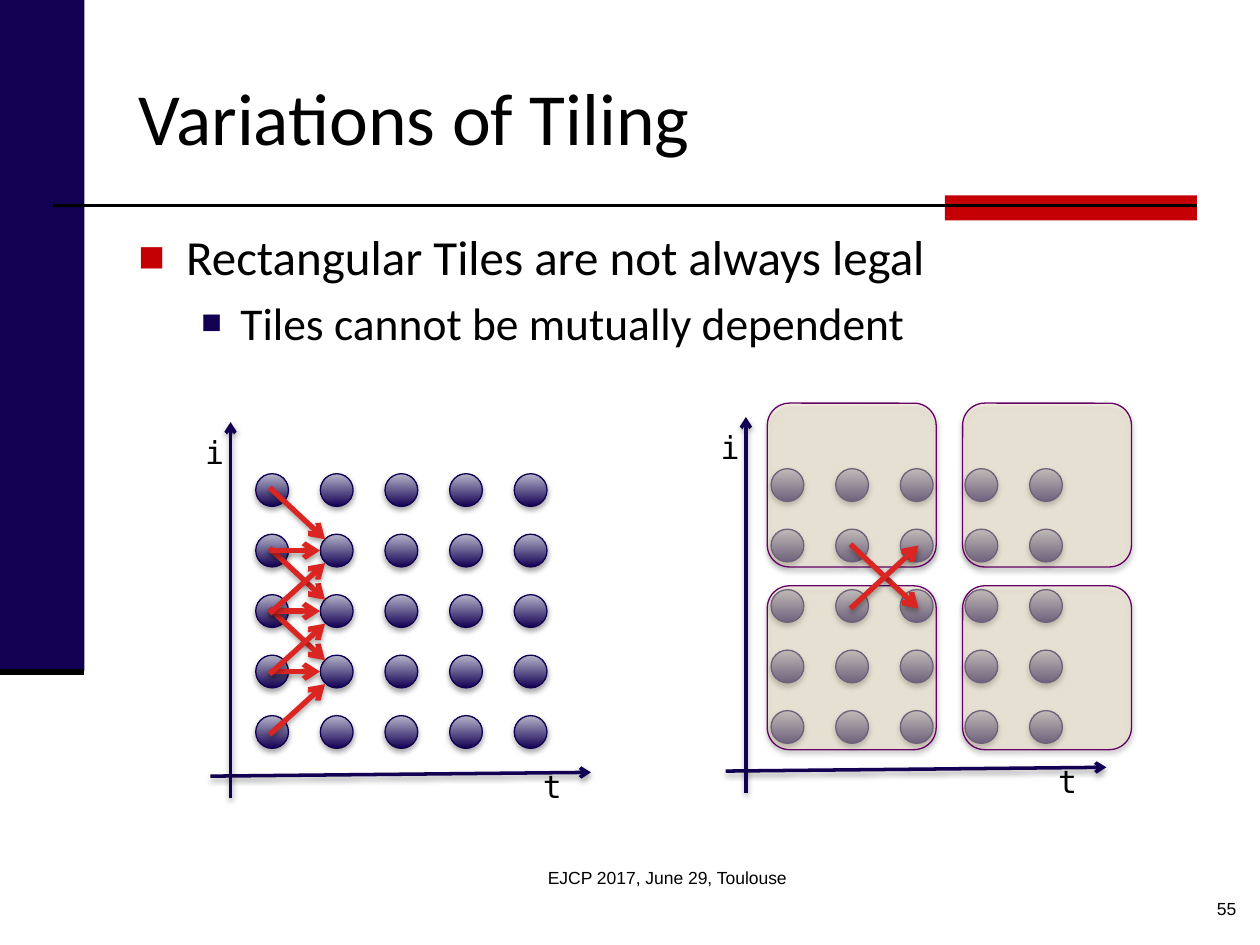
from itertools import product

from lxml import etree
from pptx import Presentation
from pptx.dml.color import RGBColor
from pptx.enum.shapes import MSO_CONNECTOR, MSO_SHAPE
from pptx.enum.text import MSO_ANCHOR, PP_ALIGN
from pptx.oxml.ns import qn
from pptx.util import Inches, Pt

STRAIGHT = MSO_CONNECTOR.STRAIGHT
RECTANGLE = MSO_SHAPE.RECTANGLE
ROUNDED = MSO_SHAPE.ROUNDED_RECTANGLE
OVAL = MSO_SHAPE.OVAL
LEFT, CENTER, RIGHT = PP_ALIGN.LEFT, PP_ALIGN.CENTER, PP_ALIGN.RIGHT
MIDDLE = MSO_ANCHOR.MIDDLE

COLORS = {
    "navy": "120053",
    "lavender": "B6B5CA",
    "outline": "120051",
    "red": "C40005",
    "arrow": "DA2523",
    "tile": "F5E9C8",
    "purple": "660066",
    "black": "000000",
}
WIDTH, HEIGHT = 10, 7.5
COLUMNS, ROWS = 100, 75
DOTS = 5
DOT_SIZE = 2.6
DOT_STEP_X, DOT_STEP_Y = 5.13, 4.8


class SlideBuilder:
    heading_font = "Calibri"
    label_font = "DejaVu Sans Mono"
    footer_font = "Arial"

    def __init__(self, deck):
        self.slide = deck.slides.add_slide(deck.slide_layouts[5])
        self.shapes = self.slide.shapes

    def area(self, left, top, width, height):
        column, row = WIDTH / COLUMNS, HEIGHT / ROWS
        return [Inches(left * column), Inches(top * row),
                Inches(width * column), Inches(height * row)]

    def color(self, name):
        return RGBColor.from_string(COLORS[name])

    def effects(self, shape, shadow):
        properties = shape._element.spPr
        effects = etree.SubElement(properties, qn("a:effectLst"))
        if shadow:
            outer = etree.SubElement(effects, qn("a:outerShdw"), blurRad="40000",
                                     dist="23000", dir="5400000", rotWithShape="0")
            tint = etree.SubElement(outer, qn("a:srgbClr"), val=COLORS["black"])
            etree.SubElement(tint, qn("a:alpha"), val="35000")

    def set_text(self, paragraph, text, font, size, align=LEFT):
        paragraph.text = text
        paragraph.alignment = align
        paragraph.font.name = font
        paragraph.font.size = Pt(size)
        paragraph.font.color.rgb = self.color("black")

    def title(self, text, *place):
        holder = self.shapes.title
        holder.left, holder.top, holder.width, holder.height = self.area(*place)
        holder.text_frame.vertical_anchor = MIDDLE
        self.set_text(holder.text_frame.paragraphs[0], text, self.heading_font, 42)

    def text(self, text, place, font, size, align=LEFT):
        box = self.shapes.add_textbox(*self.area(*place))
        box.text_frame.word_wrap = True
        self.set_text(box.text_frame.paragraphs[0], text, font, size, align)

    def bullets(self, items, *place):
        frame = self.shapes.add_textbox(*self.area(*place)).text_frame
        frame.word_wrap = True
        for index, (text, size, margin, hang, color, scale) in enumerate(items):
            para = frame.add_paragraph() if index else frame.paragraphs[0]
            para.level = index
            settings = para._p.get_or_add_pPr()
            settings.set("marL", str(Inches(margin)))
            settings.set("indent", str(-Inches(hang)))
            if index:
                para.space_before = Pt(size * 0.2)
            tint = etree.SubElement(settings, qn("a:buClr"))
            etree.SubElement(tint, qn("a:srgbClr"), val=COLORS[color])
            etree.SubElement(settings, qn("a:buSzPct"), val=str(scale * 1000))
            etree.SubElement(settings, qn("a:buFont"), typeface=self.footer_font)
            etree.SubElement(settings, qn("a:buChar"), char="■")
            self.set_text(para, text, self.heading_font, size)

    def bar(self, color, *place):
        bar = self.shapes.add_shape(RECTANGLE, *self.area(*place))
        bar.fill.solid()
        bar.fill.fore_color.rgb = self.color(color)
        bar.line.fill.background()
        bar.shadow.inherit = False

    def line(self, start, end, color, weight, arrow=False):
        line = self.shapes.add_connector(STRAIGHT, *self.area(*start, *end))
        line.line.color.rgb = self.color(color)
        line.line.width = Pt(weight)
        if arrow:
            etree.SubElement(line.line._ln, qn("a:tailEnd"), type="arrow")
        self.effects(line, arrow)

    def dot(self, left, top):
        dot = self.shapes.add_shape(OVAL, *self.area(left, top, DOT_SIZE, DOT_SIZE))
        dot.fill.gradient()
        dot.fill.gradient_angle = 90
        for stop, name in zip(dot.fill.gradient_stops, ("navy", "lavender")):
            stop.color.rgb = self.color(name)
        dot.line.color.rgb = self.color("outline")
        dot.line.width = Pt(0.75)
        self.effects(dot, True)

    def tile(self, left, top):
        tile = self.shapes.add_shape(ROUNDED, *self.area(left, top, 13.4, 13))
        tile.adjustments[0] = 0.135
        tile.fill.solid()
        tile.fill.fore_color.rgb = self.color("tile")
        tint = tile._element.spPr.find(qn("a:solidFill"))[0]
        etree.SubElement(tint, qn("a:alpha"), val="42000")
        tile.line.color.rgb = self.color("purple")
        tile.line.width = Pt(0.75)
        self.effects(tile, True)

    def dot_grid(self, left, top):
        for column, row in product(range(DOTS), range(DOTS)):
            self.dot(left + column * DOT_STEP_X, top + row * DOT_STEP_Y)
        self.line((left - 3.6, top + 24), (left + 26.6, top + 23.7), "navy", 2, True)
        self.line((left - 2, top + 25.7), (left - 2, top - 4.1), "navy", 2, True)
        for label, x, y in (("t", 21.8, 22.8), ("i", -5, -3.7)):
            self.text(label, (left + x, top + y, 2.8, 4), self.label_font, 18)


def main():
    deck = Presentation()
    deck.slide_width, deck.slide_height = Inches(WIDTH), Inches(HEIGHT)
    page = SlideBuilder(deck)

    page.bar("navy", 0, 0, 6.7, 53.3)
    page.bar("red", 75, 15.5, 20, 2)
    page.line((4.2, 16.3), (95, 16.3), "black", 1.5)
    page.line((0, 53.3), (6.7, 53.3), "black", 3.5)
    page.title("Variations of Tiling", 10, 3, 85, 12.5)
    page.bullets([
        ("Rectangular Tiles are not always legal", 28, 0.38, 0.38, "red", 90),
        ("Tiles cannot be mutually dependent", 26, 0.81, 0.31, "navy", 75),
    ], 10, 17.5, 85, 49.5)

    page.dot_grid(20.3, 37.6)
    for row in (3, 2, 1):
        y = 38.9 + row * DOT_STEP_Y
        for rise, tip_x, tip_rise in ((0, 25.4, 0), (5, 25.8, 1), (-5, 25.8, -0.9)):
            page.line((21.4, y + rise), (tip_x, y + tip_rise), "arrow", 3, True)

    page.dot_grid(61.2, 37.2)
    for left, top in product((60.9, 76.4), (46.5, 32)):
        page.tile(left, top)
    for start, end in ((43.2, 48.3), (48.3, 43.3)):
        page.line((67.5, start), (72.9, end), "arrow", 3, True)

    page.text("55", (78.3, 70.8, 20.8, 2.5), page.footer_font, 10, RIGHT)
    page.text("EJCP 2017, June 29, Toulouse", (36.7, 68.3, 32.5, 5),
              page.footer_font, 10, CENTER)
    deck.save("out.pptx")


if __name__ == "__main__":
    main()
